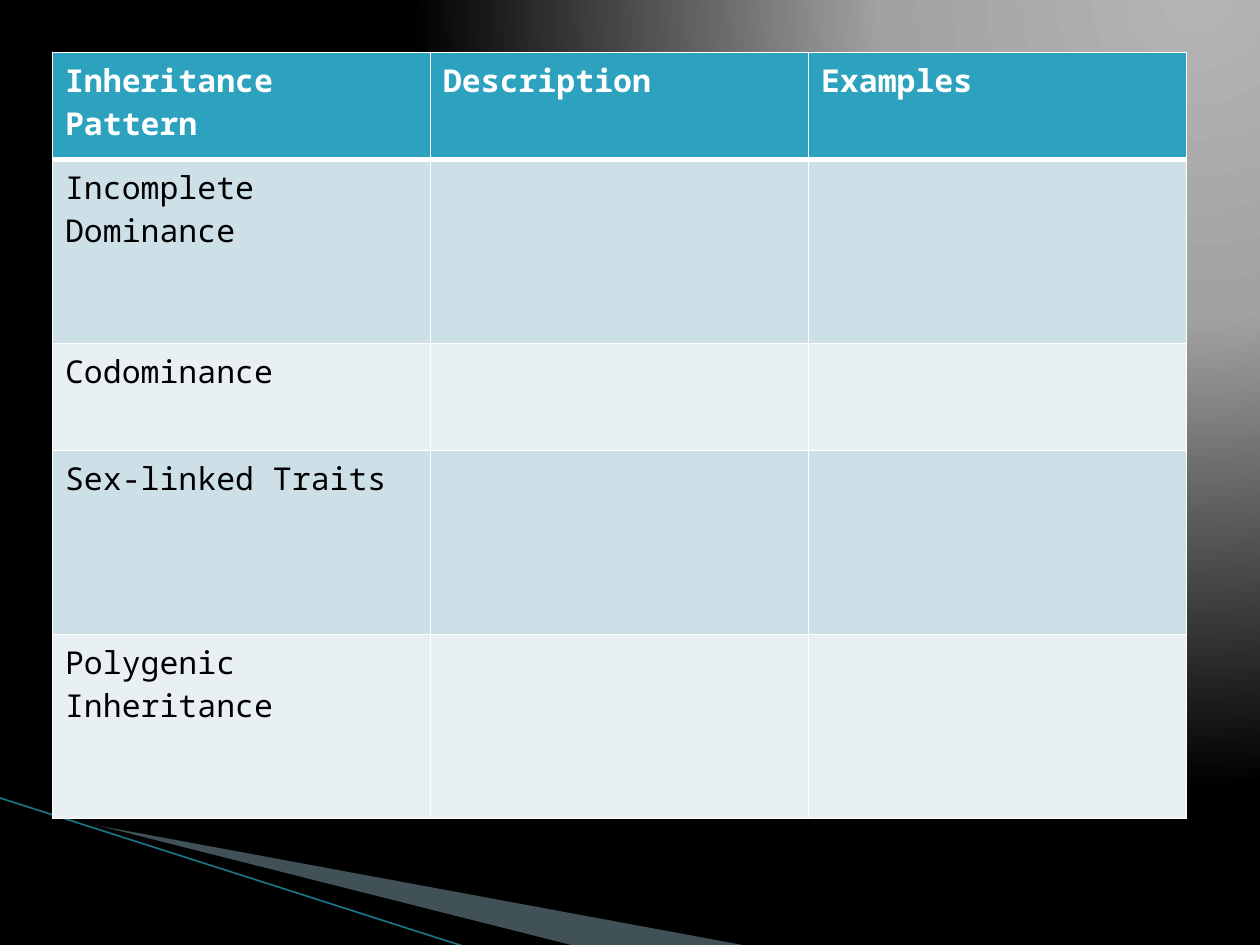
import dataclasses

import lxml.etree
import pptx
import pptx.dml.color
import pptx.enum.shapes
import pptx.oxml
import pptx.oxml.ns
import pptx.util

Inches = pptx.util.Inches
qn = pptx.oxml.ns.qn
NAMESPACE = pptx.oxml.ns.nsdecls("a")

FONT = "Noto Sans Mono"
WHITE, BLACK = "FFFFFF", "000000"
HEADER_FILL = "2DA2BF"
BAND_FILLS = ("CDE0E8", "E8F0F4")
HEADINGS = ("Inheritance Pattern", "Description", "Examples")
COLUMN_WIDTH = 3
MARGIN = 5 / 12


@dataclasses.dataclass
class Wedge:
    frame: tuple[float, float, float, float]
    points: list[tuple[float, float]]
    fill: str
    opacity: int = 100


@dataclasses.dataclass
class Row:
    texts: tuple[str, ...]
    height: float


WEDGES = [
    Wedge((0.78, 5.47, 4.16, 1.58),
          [(0.55, 6.51), (5.95, 7.51), (4.56, 7.51), (0.55, 6.5)], "A0CBDC", 40),
    Wedge((-0.06, 6.33, 4.16, 0.92),
          [(0.53, 6.49), (4.57, 7.51), (3.72, 7.52), (0.54, 6.5)], BLACK),
]
ROWS = [
    Row(HEADINGS, 0.85),
    Row(("Incomplete Dominance",), 1.46),
    Row(("Codominance",), 0.85),
    Row(("Sex-linked Traits",), 1.46),
    Row(("Polygenic Inheritance",), 1.46),
]


def color(value: str) -> pptx.dml.color.RGBColor:
    return pptx.dml.color.RGBColor.from_string(value)


def paint_background(page) -> None:
    """Fill the page with a radial gradient centred above its top right corner."""
    page.background.fill.solid()
    properties = page.element.find(".//" + qn("p:bgPr"))
    stops = "".join(
        f'<a:gs pos="{position * 1000}"><a:srgbClr val="{value}"/></a:gs>'
        for position, value in ((0, "B4B4B4"), (40, "A2A2A2"), (100, BLACK))
    )
    gradient = pptx.oxml.parse_xml(
        f'<a:gradFill {NAMESPACE} rotWithShape="1"><a:gsLst>{stops}</a:gsLst>'
        '<a:path path="circle"><a:fillToRect l="95000" t="-106000" r="5000" b="206000"/>'
        "</a:path></a:gradFill>"
    )
    properties.replace(properties.find(qn("a:solidFill")), gradient)


def set_frame(shape, frame: tuple[float, float, float, float]) -> None:
    """Give a freeform its own frame while its outline stays in place."""
    left, top, width, height = (Inches(length) for length in frame)
    shift_x, shift_y = shape.left - left, shape.top - top
    for point in shape.element.iter(qn("a:pt")):
        point.set("x", str(int(point.get("x")) + shift_x))
        point.set("y", str(int(point.get("y")) + shift_y))
    outline = shape.element.find(".//" + qn("a:path"))
    outline.set("w", str(width))
    outline.set("h", str(height))
    shape.left, shape.top, shape.width, shape.height = left, top, width, height


def draw_wedge(page, wedge: Wedge) -> None:
    start, *others = [(Inches(x), Inches(y)) for x, y in wedge.points]
    builder = page.shapes.build_freeform(*start)
    builder.add_line_segments(others, close=True)
    shape = builder.convert_to_shape()
    set_frame(shape, wedge.frame)
    shape.shadow.inherit = False
    shape.line.fill.background()
    shape.fill.solid()
    shape.fill.fore_color.rgb = color(wedge.fill)
    if wedge.opacity < 100:
        tint = shape.element.spPr.find(".//" + qn("a:srgbClr"))
        lxml.etree.SubElement(tint, qn("a:alpha"), val=str(wedge.opacity * 1000))


def draw_accent_line(page) -> None:
    line = page.shapes.add_connector(
        pptx.enum.shapes.MSO_CONNECTOR.STRAIGHT,
        Inches(-0.01), Inches(6.33), Inches(3.71), Inches(7.52),
    )
    line.line.color.rgb = color("1C7287")
    line.line.width = pptx.util.Pt(0.95)
    lxml.etree.SubElement(line.element.spPr, qn("a:effectLst"))


def set_borders(cell, top: float, bottom: float) -> None:
    properties = cell._tc.get_or_add_tcPr()
    for side, width in (("L", 1), ("R", 1), ("T", top), ("B", bottom)):
        properties.append(pptx.oxml.parse_xml(
            f'<a:ln{side} {NAMESPACE} w="{pptx.util.Pt(width)}"><a:solidFill>'
            f'<a:srgbClr val="{WHITE}"/></a:solidFill></a:ln{side}>'
        ))


def draw_table(page, rows: list[Row]) -> None:
    frame = page.shapes.add_table(
        len(rows), len(HEADINGS), Inches(MARGIN), Inches(MARGIN),
        Inches(COLUMN_WIDTH * len(HEADINGS)), Inches(sum(row.height for row in rows)),
    )
    table = frame.table
    for column in table.columns:
        column.width = Inches(COLUMN_WIDTH)
    for index, row in enumerate(rows):
        table.rows[index].height = Inches(row.height)
        header = index == 0
        for cell in table.rows[index].cells:
            # The rule under the header is thicker than the others
            set_borders(cell, 3 if index == 1 else 1, 3 if header else 1)
            cell.fill.solid()
            cell.fill.fore_color.rgb = color(
                HEADER_FILL if header else BAND_FILLS[(index - 1) % 2]
            )
        for cell, text in zip(table.rows[index].cells, row.texts):
            cell.text = text
            font = cell.text_frame.paragraphs[0].font
            font.name, font.size, font.bold = FONT, pptx.util.Pt(18), header
            font.color.rgb = color(WHITE if header else BLACK)


def main() -> None:
    deck = pptx.Presentation()
    deck.slide_width, deck.slide_height = Inches(10), Inches(7.5)
    page = deck.slides.add_slide(deck.slide_layouts[6])

    # Backdrop
    paint_background(page)
    for wedge in WEDGES:
        draw_wedge(page, wedge)
    draw_accent_line(page)

    # Inheritance patterns
    draw_table(page, ROWS)
    deck.save("out.pptx")


if __name__ == "__main__":
    main()
